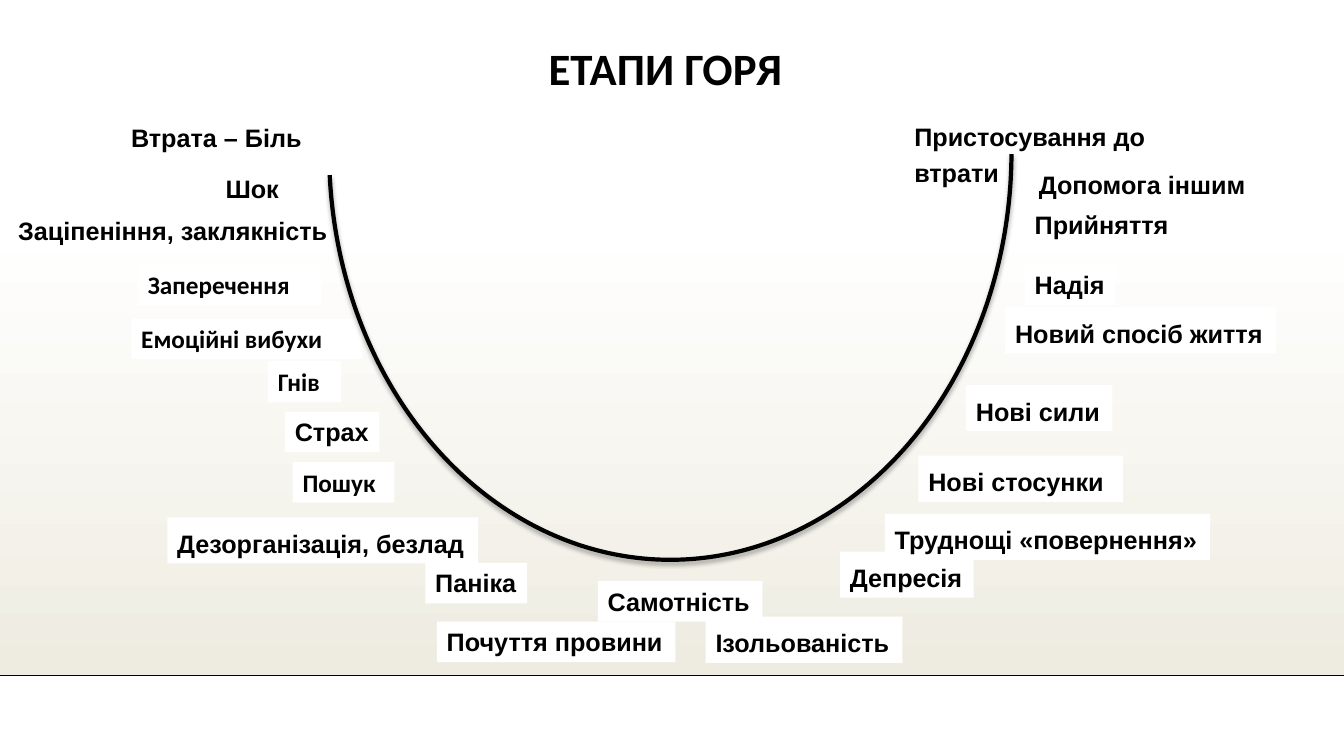
from lxml import etree
from pptx import Presentation
from pptx import util as u
from pptx.dml.color import RGBColor
from pptx.enum import shapes, text
from pptx.oxml import parse_xml
from pptx.oxml.ns import nsdecls, qn

Pt = u.Pt
BLACK = RGBColor(0x00, 0x00, 0x00)
WHITE = RGBColor(0xFF, 0xFF, 0xFF)
SAND = RGBColor(0xEE, 0xEC, 0xE1)
WIDTH, HEIGHT = 960, 540
FLOOR = 482.5  # lower edge of the shaded band

# Stages: text, left, top, width, font, line spacing
STAGES = [
    # Going down: loss
    ("Втрата – Біль", 86.5, 83.5, 137.5, "Arial", 1),
    ("Шок", 154, 120, 53.5, "Arial", 1),
    ("Заціпеніння, заклякність", 5.8, 150, 242.5, "Arial", 1),
    ("Заперечення", 98.5, 189, 131, "Calibri", 1),
    ("Емоційні вибухи", 93.8, 227.5, 165, "Calibri", 1),
    ("Гнів", 191.5, 258, 52, "Calibri", 1),
    ("Страх", 203.5, 294, 67.5, "Arial", 1),
    ("Пошук", 209, 330, 72.7, "Calibri", 1),
    ("Дезорганізація, безлад", 119.5, 369.5, 222, "Arial", 1.2),
    ("Паніка", 303.8, 402, 72.7, "Arial", 1),
    # Bottom of the curve
    ("Почуття провини", 312, 444, 170.5, "Arial", 1),
    ("Самотність", 427, 415, 117.5, "Arial", 1),
    ("Ізольованість", 504, 440.5, 140.5, "Arial", 1.2),
    # Going up: recovery
    ("Депресія", 600, 394, 95.5, "Arial", 1.2),
    ("Труднощі «повернення»", 632, 367, 232.5, "Arial", 1.2),
    ("Нові стосунки", 656, 325.5, 146, "Arial", 1.2),
    ("Нові сили", 690, 275, 104.5, "Arial", 1.2),
    ("Новий спосіб життя", 718, 219.5, 193.5, "Arial", 1.2),
    ("Надія", 732, 189, 65, "Arial", 1),
    ("Прийняття", 732, 142, 111.5, "Arial", 1.2),
]


def add_band(s):
    top = 159
    sp = s.shapes.add_shape(shapes.MSO_SHAPE.RECTANGLE, 0, Pt(top), Pt(WIDTH), Pt(FLOOR - top))
    sp.shadow.inherit = False
    sp.line.fill.background()
    sp.fill.gradient()
    sp.fill.gradient_angle = 270
    for stop, color in zip(sp.fill.gradient_stops, (WHITE, SAND)):
        stop.color.rgb = color


def add_floor_line(s):
    cn = s.shapes.add_connector(shapes.MSO_CONNECTOR.STRAIGHT, 0, Pt(FLOOR), Pt(WIDTH), Pt(FLOOR))
    cn.line.color.rgb = BLACK
    cn.line.width = Pt(1)
    etree.SubElement(cn._element.spPr, qn("a:effectLst"))


def add_label(s, words, left, top, width, font="Arial", spacing=1.0, height=None, wrap=False, size=18):
    height = height or (33 if spacing > 1 else 29)
    sp = s.shapes.add_textbox(Pt(left), Pt(top), Pt(width), Pt(height))
    sp.fill.solid()
    sp.fill.fore_color.rgb = WHITE
    tf = sp.text_frame
    tf.word_wrap = wrap
    tf.auto_size = text.MSO_AUTO_SIZE.SHAPE_TO_FIT_TEXT
    p = tf.paragraphs[0]
    p.text = words
    p.line_spacing = spacing
    p.font.name = font
    p.font.size = Pt(size)
    p.font.bold = True
    p.font.color.rgb = BLACK
    return p


def add_curve(s):
    sp = s.shapes.add_shape(shapes.MSO_SHAPE.ARC, Pt(187.2), Pt(-135.4), Pt(583.2), Pt(487.4))
    sp.rotation = 90
    sp.adjustments[0] = 162.25
    sp.adjustments[1] = 51.63
    sp.fill.background()
    sp.line.color.rgb = BLACK
    sp.line.width = Pt(3)
    # Soft shadow below the curve
    sp._element.spPr.append(parse_xml(
        f'<a:effectLst {nsdecls("a")}><a:outerShdw blurRad="{Pt(3.1)}" dist="{Pt(1.8)}" '
        'dir="5400000" rotWithShape="0"><a:srgbClr val="000000"><a:alpha val="35000"/>'
        '</a:srgbClr></a:outerShdw></a:effectLst>'))


def main():
    prs = Presentation()
    prs.slide_width, prs.slide_height = Pt(WIDTH), Pt(HEIGHT)
    s = prs.slides.add_slide(prs.slide_layouts[6])

    # Background
    add_band(s)
    add_floor_line(s)

    # Stages and title
    for stage in STAGES:
        add_label(s, *stage)
    add_label(s, "Пристосування до втрати", 646, 78.5, 240, spacing=1.2, height=60, wrap=True)
    title = add_label(s, "ЕТАПИ ГОРЯ ", 268.5, 30, 421, "Calibri", 0.9, 42.5, True, 32)
    title.alignment = text.PP_ALIGN.CENTER

    # Curve, with the last stage in front of it
    add_curve(s)
    add_label(s, "Допомога іншим", 735, 113, 163, spacing=1.2, height=31, wrap=True)

    prs.save("out.pptx")


if __name__ == "__main__":
    main()
